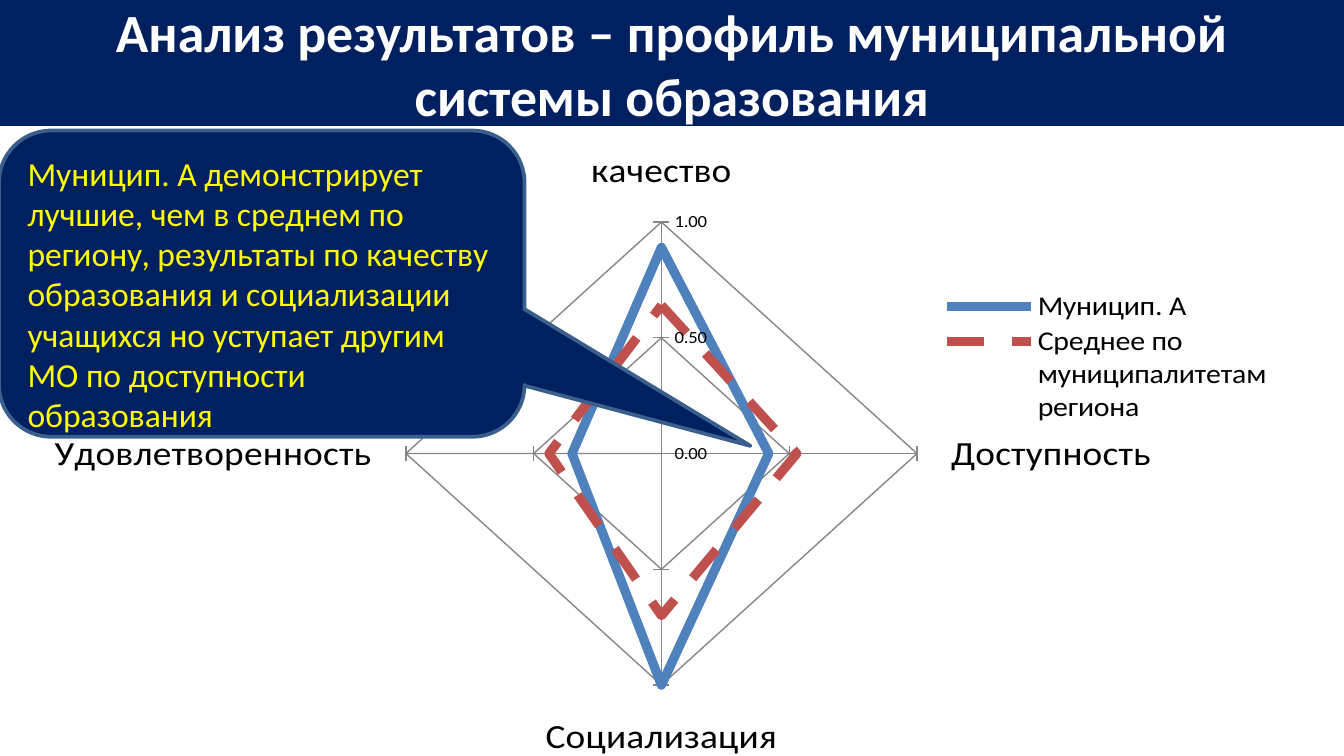
from dataclasses import dataclass

from lxml import etree
from pptx import Presentation
from pptx.chart.data import CategoryChartData
from pptx.dml.color import RGBColor
from pptx.enum import chart as ch, dml, shapes, text
from pptx.oxml import ns
from pptx.util import Pt


@dataclass(frozen=True)
class Theme:
    font: str = "Calibri"
    navy: str = "002060"
    white: str = "FFFFFF"
    yellow: str = "FFFF00"
    black: str = "000000"
    grid: str = "868686"
    outline: str = "3A5F8C"
    municipality: str = "4F81BD"
    average: str = "C0504D"
    title_size: float = 28.8
    category_size: float = 20
    callout_size: float = 18
    legend_size: float = 16
    scale_size: float = 10


THEME = Theme()

TITLE = "Анализ результатов – профиль муниципальной системы образования"
FINDING = (
    "Муницип. А демонстрирует лучшие, чем в среднем по региону, результаты "
    "по качеству образования и социализации учащихся но уступает другим МО "
    "по доступности образования"
)
CRITERIA = ["качество", "Доступность", "Социализация", "Удовлетворенность"]
# Name, scores, colour, dash
PROFILES = [
    ("Муницип. А", (0.89, 0.42, 1, 0.35), THEME.municipality, None),
    ("Среднее по муниципалитетам региона", (0.64, 0.53, 0.7, 0.44),
     THEME.average, dml.MSO_LINE.DASH),
]


def style_font(font, size, color, bold=False):
    font.name = THEME.font
    font.size = Pt(size)
    font.bold = bold
    font.color.rgb = RGBColor.from_string(color)


def style_line(line, color, width):
    line.color.rgb = RGBColor.from_string(color)
    line.width = Pt(width)


def fill_solid(shape, color):
    shape.fill.solid()
    shape.fill.fore_color.rgb = RGBColor.from_string(color)


def manual_layout(x, y, w, h, inner=False):
    """Return a c:layout element in fractions of the chart area."""
    layout = etree.Element(ns.qn("c:layout"))
    manual = etree.SubElement(layout, ns.qn("c:manualLayout"))
    settings = [("layoutTarget", "inner")] if inner else []
    settings += [("xMode", "edge"), ("yMode", "edge"),
                 ("x", x), ("y", y), ("w", w), ("h", h)]
    for tag, value in settings:
        etree.SubElement(manual, ns.qn(f"c:{tag}")).set("val", str(value))
    return layout


def place(element, layout, index):
    for old in element.findall(ns.qn("c:layout")):
        element.remove(old)
    element.insert(index, layout)


def add_title(slide, width):
    banner = slide.shapes.title
    banner.left, banner.top = Pt(0), Pt(0)
    banner.width, banner.height = width, Pt(67.5)
    fill_solid(banner, THEME.navy)
    frame = banner.text_frame
    frame.text = TITLE
    frame.auto_size = text.MSO_AUTO_SIZE.NONE
    frame.vertical_anchor = text.MSO_ANCHOR.MIDDLE
    heading = frame.paragraphs[0]
    heading.alignment = text.PP_ALIGN.CENTER
    style_font(heading.font, THEME.title_size, THEME.white, bold=True)


def add_profile_radar(slide):
    scores = CategoryChartData(number_format="0.00")
    scores.categories = CRITERIA
    for name, values, _, _ in PROFILES:
        scores.add_series(name, values)
    radar = slide.shapes.add_chart(
        ch.XL_CHART_TYPE.RADAR, Pt(-8.5), Pt(80), Pt(711.5), Pt(326), scores
    ).chart
    radar.has_title = False
    style_font(radar.font, THEME.scale_size, THEME.black)
    radar.plots[0].vary_by_categories = False

    # Profile lines
    for series, (_, _, color, dash) in zip(radar.plots[0].series, PROFILES):
        style_line(series.format.line, color, 5)
        if dash is not None:
            series.format.line.dash_style = dash

    # Axes
    criteria, scale = radar.category_axis, radar.value_axis
    style_font(criteria.tick_labels.font, THEME.category_size, THEME.black)
    scale.minimum_scale, scale.maximum_scale, scale.major_unit = 0, 1, 0.5
    scale.major_tick_mark = ch.XL_TICK_MARK.CROSS
    scale.minor_tick_mark = ch.XL_TICK_MARK.NONE
    scale.tick_labels.number_format = "0.00"
    scale.tick_labels.number_format_is_linked = False
    for axis in (criteria, scale):
        axis.has_major_gridlines = True
        style_line(axis.major_gridlines.format.line, THEME.grid, 0.75)
        style_line(axis.format.line, THEME.grid, 0.75)

    # Legend and plot placement
    radar.has_legend = True
    legend = radar.legend
    legend.position = ch.XL_LEGEND_POSITION.RIGHT
    legend.include_in_layout = False
    style_font(legend.font, THEME.legend_size, THEME.black)
    place(legend._element, manual_layout(0.72, 0.17, 0.25, 0.25), 1)
    plot_area = radar._chartSpace.chart.plotArea
    place(plot_area, manual_layout(0.28, 0.05, 0.46, 0.84, inner=True), 0)


def add_finding_callout(slide):
    callout = slide.shapes.add_shape(
        shapes.MSO_SHAPE.ROUNDED_RECTANGULAR_CALLOUT,
        Pt(-0.5), Pt(70), Pt(281.5), Pt(164),
    )
    callout.shadow.inherit = False
    # Pointer tip (x, y from the centre) and corner radius
    for index, value in enumerate((0.93, 0.53, 0.17)):
        callout.adjustments[index] = value
    fill_solid(callout, THEME.navy)
    style_line(callout.line, THEME.outline, 2)
    frame = callout.text_frame
    frame.word_wrap = True
    frame.vertical_anchor = text.MSO_ANCHOR.TOP
    frame.text = FINDING
    finding = frame.paragraphs[0]
    finding.alignment = text.PP_ALIGN.LEFT
    style_font(finding.font, THEME.callout_size, THEME.yellow)


def main():
    deck = Presentation()
    deck.slide_width, deck.slide_height = Pt(720), Pt(405)
    slide = deck.slides.add_slide(deck.slide_layouts[5])
    add_title(slide, deck.slide_width)
    add_profile_radar(slide)
    add_finding_callout(slide)
    deck.save("out.pptx")


if __name__ == "__main__":
    main()
